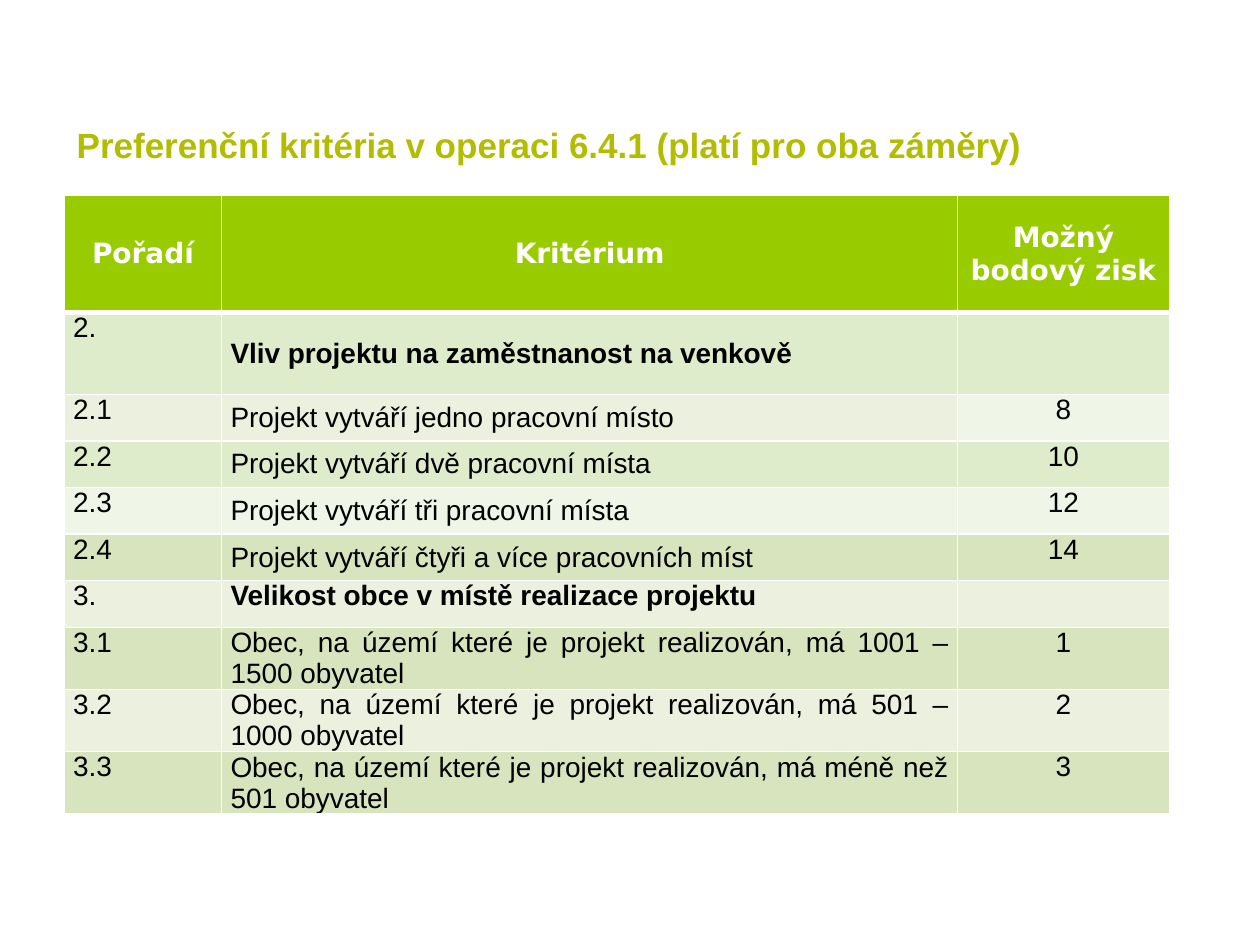
from dataclasses import dataclass

from lxml.etree import SubElement
from pptx import Presentation
from pptx.dml.color import RGBColor
from pptx.enum.text import MSO_ANCHOR as Anchor, PP_ALIGN as Align
from pptx.oxml.ns import qn
from pptx.util import Inches, Pt


@dataclass(frozen=True)
class Theme:
    """Colours, fonts and sizes of the slide."""
    title: str = "B2BC00"
    header: str = "99CC00"
    white: str = "FFFFFF"
    black: str = "000000"
    mint: str = "DEECCB"
    pale_mint: str = "EFF6E7"
    olive: str = "D7E4BD"
    pale_olive: str = "EBF1DE"
    font: str = "Arial"
    header_font: str = "DejaVu Sans"
    title_size: int = 20
    table_size: int = 16
    line: float = 0.91
    header_line: float = 2.95


T = Theme()
HEADERS = ["Pořadí", "Kritérium", "Možný bodový zisk"]
CRITERIA = [
    ("2. ", "Vliv projektu na zaměstnanost na venkově", "", T.mint),
    ("2.1", "Projekt vytváří jedno pracovní místo", "8", T.pale_olive),
    ("2.2", "Projekt vytváří dvě pracovní místa", "10", T.mint),
    ("2.3", "Projekt vytváří tři pracovní místa", "12", T.pale_mint),
    ("2.4", "Projekt vytváří čtyři a více pracovních míst", "14", T.olive),
    ("3. ", "Velikost obce v místě realizace projektu", "", T.pale_olive),
    ("3.1", "Obec, na území které je projekt realizován, má 1001 – 1500 obyvatel", "1", T.olive),
    ("3.2", "Obec, na území které je projekt realizován, má 501 – 1000 obyvatel", "2", T.pale_olive),
    ("3.3", "Obec, na území které je projekt realizován, má méně než 501 obyvatel", "3", T.olive),
]
COLUMN_WIDTHS = [1.25, 5.84, 1.68]
ROW_HEIGHTS = [0.93, 0.65] + [0.37] * 8
ALIGNMENTS = [Align.LEFT, Align.JUSTIFY, Align.CENTER]


def set_attributes(target, values):
    """Set each named attribute of the target."""
    for name, value in values.items():
        setattr(target, name, value)


def format_font(font, size, color, name, bold):
    """Set size, colour, typeface and weight of a font."""
    set_attributes(font, dict(size=Pt(size), name=name, bold=bold))
    font.color.rgb = RGBColor.from_string(color)


def set_borders(cell, top, bottom):
    """Draw white lines on the four sides of a cell."""
    tc_pr = cell._tc.get_or_add_tcPr()
    for side, width in dict(L=T.line, R=T.line, T=top, B=bottom).items():
        ln = SubElement(tc_pr, qn(f"a:ln{side}"), w=str(Pt(width)))
        SubElement(SubElement(ln, qn("a:solidFill")), qn("a:srgbClr"), val=T.white)


def fill_cell(cell, text, fill, margins, anchor, paragraph, font):
    """Write and format one table cell."""
    cell.fill.solid()
    cell.fill.fore_color.rgb = RGBColor.from_string(fill)
    x, y = map(Inches, margins)
    set_attributes(cell, dict(margin_left=x, margin_right=x, margin_top=y,
                              margin_bottom=y, vertical_anchor=anchor))
    p = cell.text_frame.paragraphs[0]
    set_attributes(p, paragraph)
    if text:
        r = p.add_run()
        r.text = text
        format_font(r.font, **font)
    else:
        p.font.size = Pt(font["size"])


def add_title(slide, left, top, width, height):
    """Place the slide title at the bottom of its box."""
    sp = slide.shapes.add_textbox(*map(Inches, (left, top, width, height)))
    tf = sp.text_frame
    set_attributes(tf, dict(word_wrap=True, vertical_anchor=Anchor.BOTTOM))
    r = tf.paragraphs[0].add_run()
    r.text = "Preferenční kritéria v operaci 6.4.1 (platí pro oba záměry)"
    format_font(r.font, T.title_size, T.title, T.font, True)


def add_criteria_table(slide, left, top, width, height):
    """Place the table of criteria and points."""
    table = slide.shapes.add_table(len(ROW_HEIGHTS), len(COLUMN_WIDTHS),
                                   *map(Inches, (left, top, width, height))).table
    table.horz_banding = False
    for column, w in zip(table.columns, COLUMN_WIDTHS):
        column.width = Inches(w)
    for row, h in zip(table.rows, ROW_HEIGHTS):
        row.height = Inches(h)

    header_font = dict(size=T.table_size, color=T.white, name=T.header_font, bold=True)
    for cell, text in zip(table.rows[0].cells, HEADERS):
        set_borders(cell, T.line, T.header_line)
        fill_cell(cell, text, T.header, (0.1, 0.05), Anchor.MIDDLE,
                  dict(alignment=Align.CENTER, line_spacing=1.01), header_font)

    for i, (*texts, fill) in enumerate(CRITERIA, 1):
        is_group = not texts[2]
        for j, text in enumerate(texts):
            cell = table.cell(i, j)
            set_borders(cell, T.header_line if i == 1 else T.line, T.line)
            middle = j == 1 and texts[0].strip() != "3."
            color = T.pale_mint if (i, j) == (2, 2) else fill
            fill_cell(cell, text, color, (0.07, 0),
                      Anchor.MIDDLE if middle else Anchor.TOP,
                      dict(alignment=ALIGNMENTS[j], space_after=Pt(12)),
                      dict(size=T.table_size, color=T.black, name=T.font,
                           bold=is_group and j == 1))


def main():
    """Build and save the slide."""
    prs = Presentation()
    set_attributes(prs, dict(slide_width=Inches(10), slide_height=Inches(7.5)))
    slide = prs.slides.add_slide(prs.slide_layouts[6])
    add_criteria_table(slide, 0.51, 1.55, sum(COLUMN_WIDTHS), sum(ROW_HEIGHTS))
    add_title(slide, 0.51, 0.52, 8.82, 0.84)
    prs.save("out.pptx")


if __name__ == "__main__":
    main()
